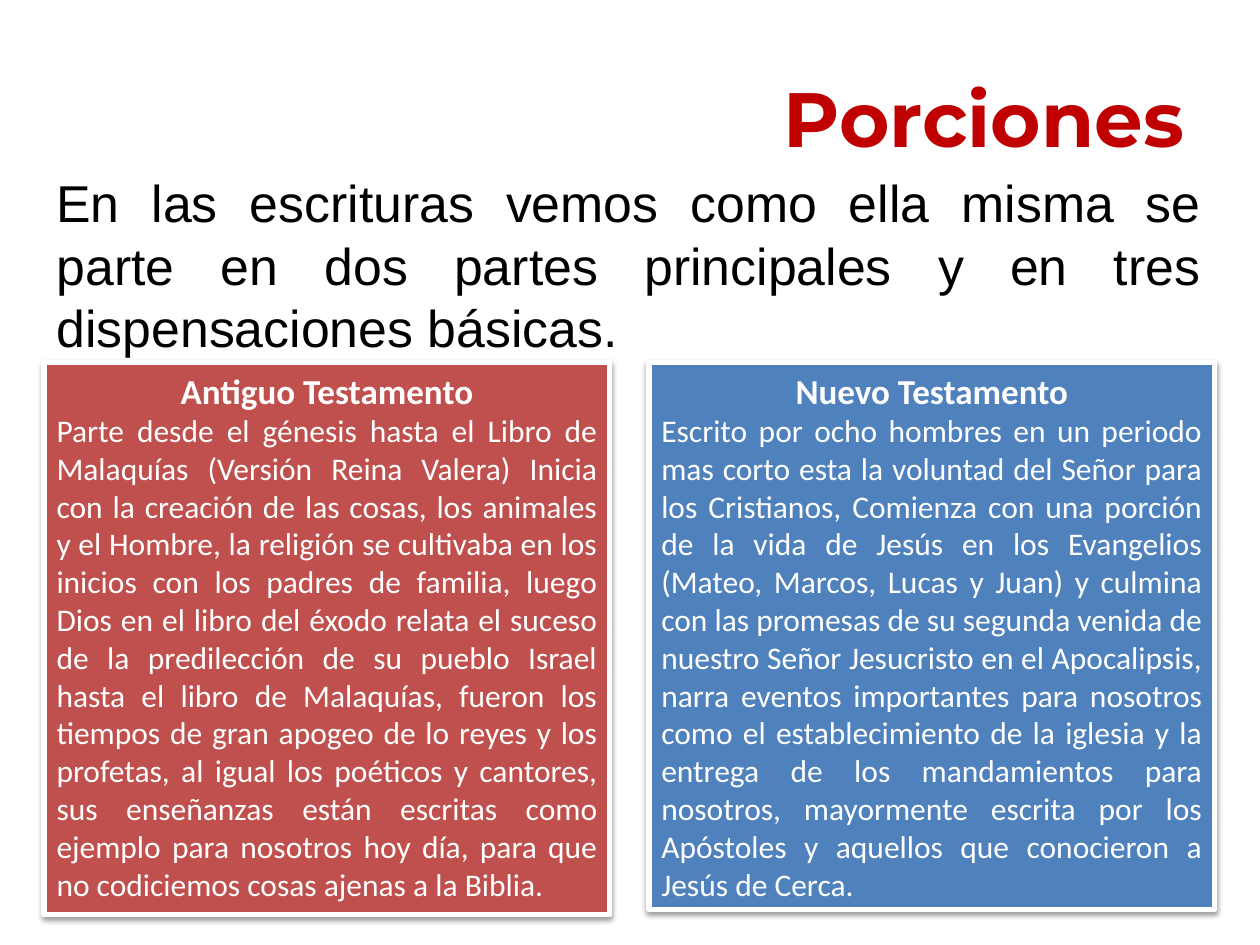
from dataclasses import dataclass

from lxml.etree import SubElement
from pptx import Presentation
from pptx.dml.color import RGBColor
from pptx.enum.shapes import MSO_SHAPE
from pptx.enum.text import MSO_ANCHOR, MSO_AUTO_SIZE, PP_ALIGN
from pptx.oxml.ns import qn
from pptx.util import Inches, Pt

BLACK = RGBColor(0x00, 0x00, 0x00)
WHITE = RGBColor(0xFF, 0xFF, 0xFF)
CRIMSON = RGBColor(0xC0, 0x00, 0x00)
BRICK = RGBColor(0xC0, 0x50, 0x4D)
BLUE = RGBColor(0x4F, 0x81, 0xBD)

LEFT, CARD_GAP = 0.35, 0.31
CARD_TOP, CARD_WIDTH = 2.88, 4.49


@dataclass
class Testament:
    heading: str
    summary: str
    fill: RGBColor
    height: float


TESTAMENTS = [
    Testament(
        "Antiguo Testamento",
        "Parte desde el génesis hasta el Libro de Malaquías (Versión Reina Valera) "
        "Inicia con la creación de las cosas, los animales y el Hombre, la religión "
        "se cultivaba en los inicios con los padres de familia, luego Dios en el "
        "libro del éxodo relata el suceso de la predilección de su pueblo Israel "
        "hasta el libro de Malaquías, fueron los tiempos de gran apogeo de lo reyes "
        "y los profetas, al igual los poéticos y cantores, sus enseñanzas están "
        "escritas como ejemplo para nosotros hoy día, para que no codiciemos cosas "
        "ajenas a la Biblia.",
        BRICK, 4.38),
    Testament(
        "Nuevo Testamento",
        "Escrito por ocho hombres en un periodo mas corto esta la voluntad del Señor "
        "para los Cristianos, Comienza con una porción de la vida de Jesús en los "
        "Evangelios (Mateo, Marcos, Lucas y Juan) y culmina con las promesas de su "
        "segunda venida de nuestro Señor Jesucristo en el Apocalipsis, narra eventos "
        "importantes para nosotros como el establecimiento de la iglesia y la "
        "entrega de los mandamientos para nosotros, mayormente escrita por los "
        "Apóstoles y aquellos que conocieron a Jesús de Cerca.",
        BLUE, 4.34),
]


def write(para, text: str, font: str, size: float, color: RGBColor,
          align: PP_ALIGN, bold: bool = False) -> None:
    para.text = text
    para.alignment = align
    para.font.name = font
    para.font.size = Pt(size)
    para.font.color.rgb = color
    para.font.bold = bold


def add_soft_shadow(shape) -> None:
    shape.shadow.inherit = False
    effects = shape._element.spPr.find(qn("a:effectLst"))
    shadow = SubElement(effects, qn("a:outerShdw"), blurRad=str(Pt(3.1)),
                        dist=str(Pt(1.6)), dir="5400000", rotWithShape="0")
    color = SubElement(shadow, qn("a:srgbClr"), val=str(BLACK))
    SubElement(color, qn("a:alpha"), val="38000")


def add_card(page, testament: Testament, left: float) -> None:
    card = page.shapes.add_shape(
        MSO_SHAPE.RECTANGLE, Inches(left), Inches(CARD_TOP),
        Inches(CARD_WIDTH), Inches(testament.height))
    card.fill.solid()
    card.fill.fore_color.rgb = testament.fill
    card.line.color.rgb = WHITE
    card.line.width = Pt(3)
    add_soft_shadow(card)
    frame = card.text_frame
    frame.word_wrap = True
    frame.auto_size = MSO_AUTO_SIZE.SHAPE_TO_FIT_TEXT
    frame.vertical_anchor = MSO_ANCHOR.TOP
    write(frame.paragraphs[0], testament.heading, "Calibri", 20, WHITE,
          PP_ALIGN.CENTER, bold=True)
    write(frame.add_paragraph(), testament.summary, "Calibri", 18, WHITE,
          PP_ALIGN.JUSTIFY)


def main() -> None:
    deck = Presentation()
    deck.slide_width, deck.slide_height = Inches(10), Inches(7.5)
    page = deck.slides.add_slide(deck.slide_layouts[5])

    # Title
    title = page.shapes.title
    title.left, title.top = Inches(0.5), Inches(0.3)
    title.width, title.height = Inches(9), Inches(1.25)
    title.text_frame.vertical_anchor = MSO_ANCHOR.MIDDLE
    write(title.text_frame.paragraphs[0], "Porciones", "Montserrat", 44, CRIMSON,
          PP_ALIGN.RIGHT, bold=True)

    # Introduction
    intro = page.shapes.add_textbox(Inches(LEFT), Inches(1.31),
                                    Inches(9.29), Inches(1.5))
    intro.text_frame.word_wrap = True
    write(intro.text_frame.paragraphs[0],
          "En las escrituras vemos como ella misma se parte en dos partes "
          "principales y en tres dispensaciones básicas.", "Arial", 29.6, BLACK,
          PP_ALIGN.JUSTIFY)

    # One card per testament
    for index, testament in enumerate(TESTAMENTS):
        add_card(page, testament, LEFT + index * (CARD_WIDTH + CARD_GAP))

    deck.save("out.pptx")


if __name__ == "__main__":
    main()
